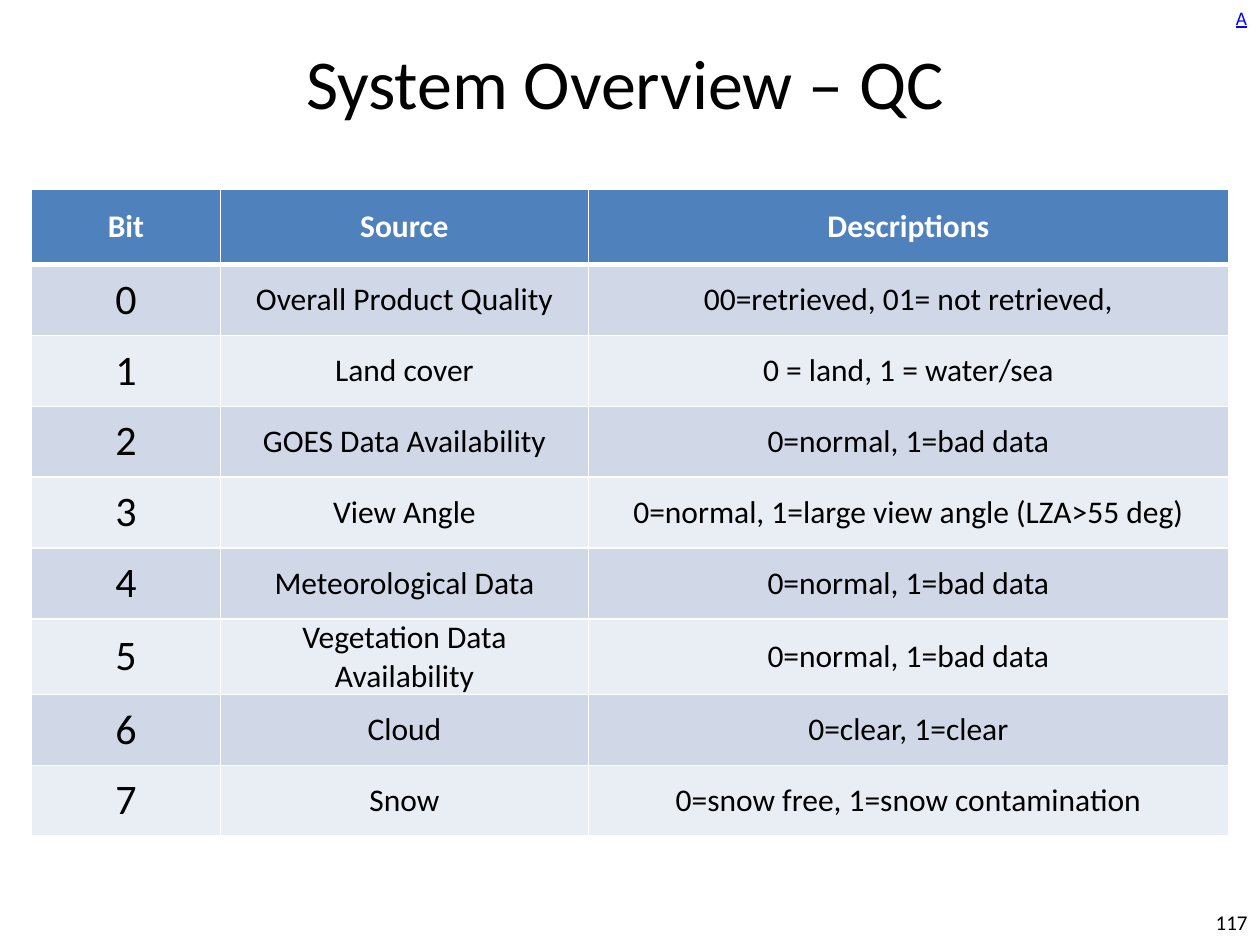
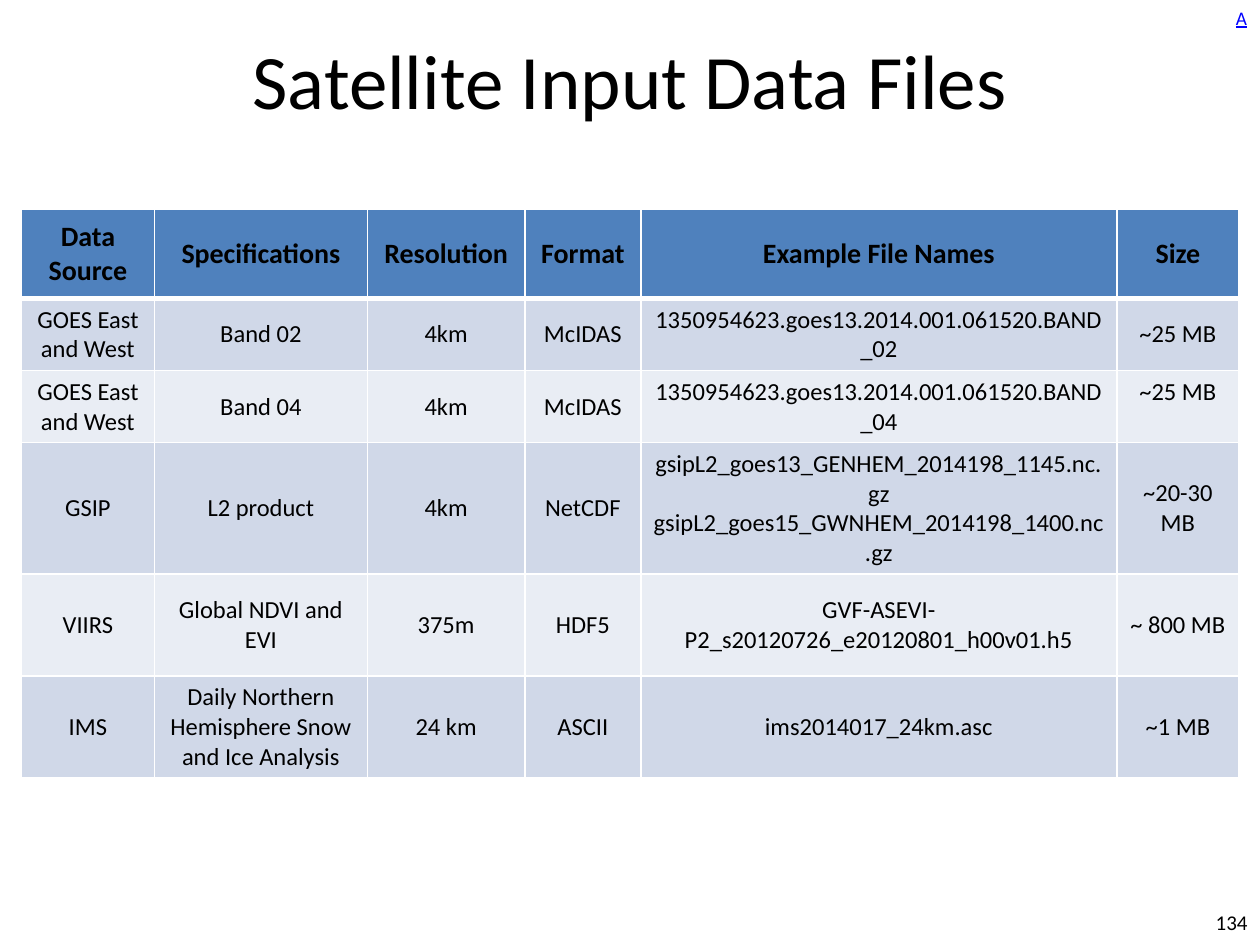
from dataclasses import dataclass

from lxml import etree
from pptx import Presentation
from pptx.dml import color
from pptx.enum import text
from pptx.oxml import ns
from pptx.util import Pt


@dataclass(frozen=True)
class Theme:
    font: str = "Calibri"
    ink: str = "000000"
    paper: str = "FFFFFF"
    link: str = "0000FF"
    header: str = "4F81BD"
    bands: tuple = ("D0D8E8", "E9EDF4")
    number_size: float = 12
    marker_size: float = 11
    title_sizes: tuple = (40, 44)
    bit_size: float = 24
    quality_size: float = 18
    files_header_size: float = 16
    files_size: float = 14
    rule: float = 1
    header_rule: float = 3


class Deck:
    def __init__(self, theme):
        self.theme = theme
        self.prs = Presentation()
        self.prs.slide_width, self.prs.slide_height = Pt(720), Pt(540)
        self.s = None

    def slide(self, title, box, size, number):
        self.s = self.prs.slides.add_slide(self.prs.slide_layouts[5])
        self.textbox(number, (666, 512.64, 54, 28.8), self.theme.number_size,
                     align=text.PP_ALIGN.RIGHT, anchor=text.MSO_ANCHOR.MIDDLE)
        self.textbox("A", (699.12, 0, 20.88, 20.88), self.theme.marker_size,
                     ink=self.theme.link, underline=True, wrap=False)
        self.title(title, box, size)

    def title(self, words, box, size):
        sp = self.s.shapes.title
        sp.left, sp.top, sp.width, sp.height = map(Pt, box)
        tf = sp.text_frame
        tf.auto_size = text.MSO_AUTO_SIZE.NONE
        tf.vertical_anchor = text.MSO_ANCHOR.MIDDLE
        self.put_text(tf, words, size, text.PP_ALIGN.CENTER)

    def textbox(self, words, box, size, align=text.PP_ALIGN.LEFT,
                anchor=text.MSO_ANCHOR.TOP, wrap=True, **style):
        tf = self.s.shapes.add_textbox(*map(Pt, box)).text_frame
        tf.word_wrap = wrap
        tf.vertical_anchor = anchor
        self.put_text(tf, words, size, align, **style)

    def put_text(self, tf, words, size, align, ink=None, bold=False,
                 underline=False, after=None):
        for i, line in enumerate(words.split("\n")):
            p = tf.add_paragraph() if i else tf.paragraphs[0]
            p.alignment = align
            if after:
                p.space_after = Pt(after)
            r = p.add_run()
            r.text = line
            r.font.name = self.theme.font
            r.font.size = Pt(size)
            r.font.bold = bold
            r.font.underline = underline
            r.font.color.rgb = color.RGBColor.from_string(ink or self.theme.ink)

    def table(self, origin, widths, heights, rows, size, header_size,
              header_ink=None, key_size=None, value_inset=None, after=None):
        t = self.theme
        left, top = origin
        table = self.s.shapes.add_table(
            len(rows), len(widths), Pt(left), Pt(top),
            Pt(sum(widths)), Pt(sum(heights))).table
        for column, width in zip(table.columns, widths):
            column.width = Pt(width)
        for i, (row, height) in enumerate(zip(rows, heights)):
            table.rows[i].height = Pt(height)
            for j, words in enumerate(row):
                cell = table.cell(i, j)
                if i == 0:
                    self.cell(cell, words, t.header, header_size,
                              ink=header_ink, bold=True)
                elif j == 0:
                    self.cell(cell, words, t.bands[(i - 1) % 2], key_size or size)
                else:
                    self.cell(cell, words, t.bands[(i - 1) % 2], size,
                              inset=value_inset, after=after)
                self.borders(cell, top=t.header_rule if i == 1 else t.rule,
                             bottom=t.header_rule if i == 0 else t.rule)
        return table

    def cell(self, cell, words, fill, size, inset=None, **style):
        cell.vertical_anchor = text.MSO_ANCHOR.MIDDLE
        if inset is not None:
            cell.margin_left = cell.margin_right = Pt(inset)
            cell.margin_top = cell.margin_bottom = 0
        cell.fill.solid()
        cell.fill.fore_color.rgb = color.RGBColor.from_string(fill)
        self.put_text(cell.text_frame, words, size, text.PP_ALIGN.CENTER, **style)

    def borders(self, cell, top, bottom):
        tc_pr = cell._tc.get_or_add_tcPr()
        weights = {"L": self.theme.rule, "R": self.theme.rule, "T": top, "B": bottom}
        for i, (side, weight) in enumerate(weights.items()):
            ln = etree.Element(ns.qn(f"a:ln{side}"), w=str(int(Pt(weight))))
            fill = etree.SubElement(ln, ns.qn("a:solidFill"))
            etree.SubElement(fill, ns.qn("a:srgbClr"), val=self.theme.paper)
            tc_pr.insert(i, ln)


QUALITY_BITS = [
    ("Bit", "Source", "Descriptions"),
    ("0", "Overall Product Quality", "00=retrieved, 01= not retrieved,"),
    ("1", "Land cover", "0 = land, 1 = water/sea"),
    ("2", "GOES Data Availability", "0=normal, 1=bad data"),
    ("3", "View Angle", "0=normal, 1=large view angle (LZA>55 deg)"),
    ("4", "Meteorological Data", "0=normal, 1=bad data"),
    ("5", "Vegetation Data Availability", "0=normal, 1=bad data"),
    ("6", "Cloud", "0=clear, 1=clear"),
    ("7", "Snow", "0=snow free, 1=snow contamination"),
]

INPUT_FILES = [
    ("Data Source", "Specifications", "Resolution", "Format",
     "Example File Names", "Size"),
    ("GOES East and West", "Band 02", "4km", "McIDAS",
     "1350954623.goes13.2014.001.061520.BAND_02", "~25 MB"),
    ("GOES East and West", "Band 04", "4km", "McIDAS",
     "1350954623.goes13.2014.001.061520.BAND_04", "~25 MB"),
    ("GSIP", "L2 product", "4km", "NetCDF",
     "gsipL2_goes13_GENHEM_2014198_1145.nc.gz\n"
     "gsipL2_goes15_GWNHEM_2014198_1400.nc.gz", "~20-30 MB"),
    ("VIIRS", "Global NDVI and EVI", "375m", "HDF5",
     "GVF-ASEVI-P2_s20120726_e20120801_h00v01.h5", "~ 800 MB"),
    ("IMS", "Daily Northern Hemisphere Snow and Ice Analysis", "24 km",
     "ASCII", "ims2014017_24km.asc", "~1 MB"),
]


def main():
    theme = Theme()
    deck = Deck(theme)
    quality_title, files_title = theme.title_sizes

    deck.slide("System Overview – QC", (36, 21.6, 642.24, 50.4),
               quality_title, "117")
    deck.table((18, 108), (108, 210.24, 365.76),
               [43.2] + [40.5] * 5 + [43.2] + [40.5] * 2, QUALITY_BITS,
               size=theme.quality_size, header_size=theme.quality_size,
               header_ink=theme.paper, key_size=theme.bit_size,
               value_inset=5.04, after=7.8)

    deck.slide("Satellite Input Data Files", (36, 0, 648, 90),
               files_title, "134")
    files = deck.table((12.24, 119.7), (76, 121.7, 90, 66.3, 272, 69.8),
                       (50.9, 41.2, 41.2, 75.2, 58.3, 58.3), INPUT_FILES,
                       size=theme.files_size,
                       header_size=theme.files_header_size)
    files.cell(2, 5).margin_bottom = Pt(20)

    deck.prs.save("out.pptx")


if __name__ == "__main__":
    main()
